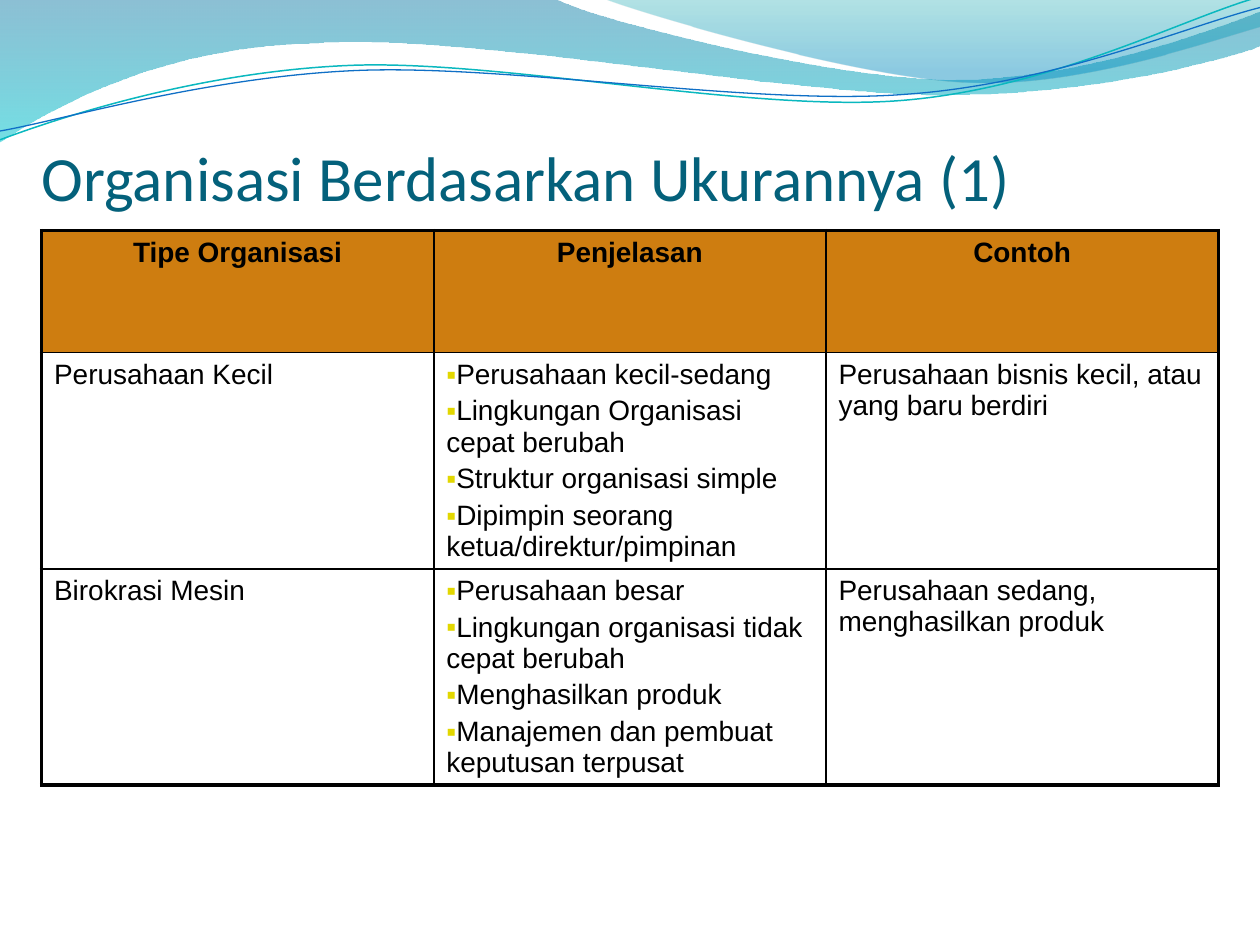
import pptx
import pptx.dml.color
import pptx.enum.text
import pptx.oxml.ns
import pptx.util
from lxml import etree
from pptx.util import Inches

COLORS = {
    "title": "04617B", "text": "000000", "border": "000000",
    "header": "CE7D10", "bullet": "E2D700",
    "teal_line": "0AB8BF", "blue_line": "0F6FC6",
    "deep_blue": "0074A1", "cyan": "00C6CF", "teal": "00A1A9", "blue": "008BBF",
}

# Each outline is a start point and segments: 2 numbers are a line, 6 a curve
LEFT_WAVE = [(0, 0), (4.4, -0.01), (4.76, 0.17, 6.64, 0.63, 7.58, 0.63),
             (8.53, 0.63, 9.58, 0.26, 10, 0.09), (10.01, 0.36),
             (9.83, 0.44, 8.7, 0.76, 7.46, 0.75), (6.22, 0.75, 3.82, 0.28, 2.57, 0.34),
             (1.29, 0.36, 0.46, 0.83, -0.01, 1.13), (0, 0)]
RIGHT_WAVE = [(4.79, -0.01), (5.09, 0.11, 6.82, 0.62, 7.69, 0.65),
              (8.56, 0.69, 9.61, 0.32, 10, 0.21), (10, 0), (4.79, -0.01)]
TEAL_CURVE = [(0, 1.11), (0.48, 0.93, 1.58, 0.57, 2.77, 0.52),
              (3.95, 0.47, 5.93, 0.89, 7.13, 0.8), (8.33, 0.71, 9.38, 0.15, 9.98, -0.02)]
BLUE_CURVE = [(0, 1.04), (0.47, 0.96, 1.64, 0.61, 2.83, 0.56),
              (4.03, 0.51, 5.97, 0.84, 7.17, 0.75), (8.36, 0.67, 9.41, 0.21, 10, 0.06)]

HEADERS = ["Tipe Organisasi", "Penjelasan", "Contoh"]
ROWS = [
    ["Perusahaan Kecil",
     ["Perusahaan kecil-sedang", "Lingkungan Organisasi cepat berubah",
      "Struktur organisasi simple", "Dipimpin seorang ketua/direktur/pimpinan"],
     "Perusahaan bisnis kecil, atau yang baru berdiri"],
    ["Birokrasi Mesin",
     ["Perusahaan besar", "Lingkungan organisasi tidak cepat berubah",
      "Menghasilkan produk", "Manajemen dan pembuat keputusan terpusat"],
     "Perusahaan sedang, menghasilkan produk"],
]


def rgb(name):
    return pptx.dml.color.RGBColor.from_string(COLORS[name])


def add_element(parent, tag, **attributes):
    return etree.SubElement(parent, pptx.oxml.ns.qn(tag), attributes)


def add_outline(slide, left, top, outline, close):
    points = [(left + Inches(segment[i]), top + Inches(segment[i + 1]))
              for segment in outline for i in range(0, len(segment), 2)]
    builder = slide.shapes.build_freeform(*points[0])
    builder.add_line_segments(points[1:], close=close)
    shape = builder.convert_to_shape()
    shape.shadow.inherit = False

    # Join the three points of each curve segment into one cubic curve
    lines = iter(list(shape._element.iter(pptx.oxml.ns.qn("a:lnTo"))))
    for segment in outline[1:]:
        first, *others = [next(lines) for _ in range(len(segment) // 2)]
        if others:
            first.tag = pptx.oxml.ns.qn("a:cubicBezTo")
        for other in others:
            first.append(other[0])
            other.getparent().remove(other)
    return shape


def add_waves(slide, left, top):
    # Filled waves: each gradient stop has a colour, a place and an opacity in percent
    for outline, stops in (
        (LEFT_WAVE, [("deep_blue", 0, 45), ("cyan", 1, 55)]),
        (RIGHT_WAVE, [("teal", 0, 30), ("blue", 0.8, 45)]),
    ):
        wave = add_outline(slide, left, top, outline, True)
        wave.line.fill.background()
        wave.fill.gradient()
        wave.fill.gradient_angle = 270
        for stop, (color, position, opacity) in zip(wave.fill.gradient_stops, stops):
            stop.color.rgb = rgb(color)
            stop.position = position
            color_element = stop._gs.find(pptx.oxml.ns.qn("a:srgbClr"))
            add_element(color_element, "a:alpha", val=str(opacity * 1000))

    # Thin curves
    for outline, color, width in ((TEAL_CURVE, "teal_line", 0.85),
                                  (BLUE_CURVE, "blue_line", 0.75)):
        curve = add_outline(slide, left, top, outline, False)
        curve.fill.background()
        curve.line.color.rgb = rgb(color)
        curve.line.width = pptx.util.Pt(width)


def add_title(slide, left, top, width, height):
    title = slide.shapes.title
    title._element.getparent().append(title._element)  # in front of the waves
    title.left, title.top, title.width, title.height = left, top, width, height
    frame = title.text_frame
    frame.text = "Organisasi Berdasarkan Ukurannya (1)"
    frame.word_wrap = True
    frame.auto_size = pptx.enum.text.MSO_AUTO_SIZE.NONE
    frame.vertical_anchor = pptx.enum.text.MSO_ANCHOR.BOTTOM
    frame.margin_left = frame.margin_right = frame.margin_bottom = 0
    frame.margin_top = Inches(0.05)
    paragraph = frame.paragraphs[0]
    paragraph.alignment = pptx.enum.text.PP_ALIGN.LEFT
    paragraph.font.name = "Calibri"
    paragraph.font.size = pptx.util.Pt(36)
    paragraph.font.color.rgb = rgb("title")


def set_borders(cell, outer_sides):
    properties = cell._tc.get_or_add_tcPr()
    for side in "LRTB":
        width = pptx.util.Pt(2.25 if side in outer_sides else 1)
        line = add_element(properties, f"a:ln{side}", w=str(width))
        add_element(add_element(line, "a:solidFill"), "a:srgbClr", val=COLORS["border"])


def add_bullet(paragraph):
    properties = paragraph._p.get_or_add_pPr()
    properties.set("marL", "0")
    properties.set("indent", "0")
    add_element(add_element(properties, "a:buClr"), "a:srgbClr", val=COLORS["bullet"])
    add_element(properties, "a:buFont", typeface="Arial")
    add_element(properties, "a:buChar", char="▪")


def fill_cell(cell, content, is_header):
    bulleted = isinstance(content, list)
    cell.text = "\n".join(content) if bulleted else content
    for paragraph in cell.text_frame.paragraphs:
        if bulleted:
            add_bullet(paragraph)
        if is_header:
            paragraph.alignment = pptx.enum.text.PP_ALIGN.CENTER
        paragraph.space_before = pptx.util.Pt(3.2)
        paragraph.font.name = "Arial"
        paragraph.font.size = pptx.util.Pt(16)
        paragraph.font.bold = is_header
        paragraph.font.color.rgb = rgb("text")


def add_organisation_table(slide, left, top, width, height):
    contents = [HEADERS] + ROWS
    last_row, last_column = len(contents) - 1, len(HEADERS) - 1
    frame = slide.shapes.add_table(len(contents), len(HEADERS), left, top, width, height)
    table = frame.table
    table.first_row = table.horz_banding = False
    for row in table.rows:
        row.height = Inches(0.97)
    frame.height = height

    for i, row in enumerate(contents):
        for j, content in enumerate(row):
            cell = table.cell(i, j)
            fill_cell(cell, content, i == 0)
            edges = {"T": i == 0, "B": i == last_row, "L": j == 0, "R": j == last_column}
            set_borders(cell, [side for side, is_outer in edges.items() if is_outer])
            if i == 0:
                cell.fill.solid()
                cell.fill.fore_color.rgb = rgb("header")
            else:
                cell.fill.background()


def main():
    presentation = pptx.Presentation()
    presentation.slide_width, presentation.slide_height = Inches(10), Inches(7.5)
    slide = presentation.slides.add_slide(presentation.slide_layouts[5])
    add_waves(slide, 0, 0)
    add_title(slide, Inches(0.33), Inches(0.25), Inches(9.31), Inches(1.45))
    add_organisation_table(slide, Inches(0.33), Inches(1.83), Inches(9.34), Inches(4.69))
    presentation.save("out.pptx")


if __name__ == "__main__":
    main()
